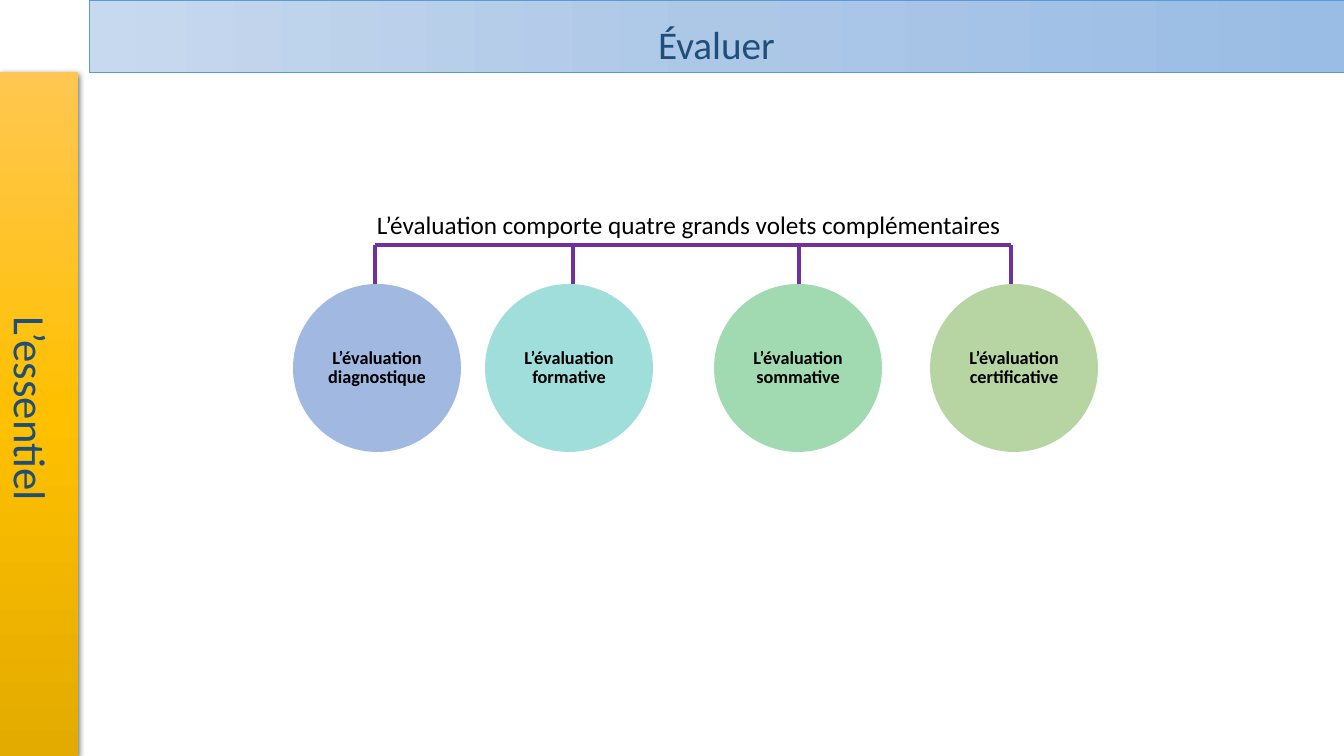
from copy import deepcopy

from lxml import etree
from pptx import Presentation
from pptx.dml.color import RGBColor
from pptx.enum.shapes import MSO_CONNECTOR as Connector, MSO_SHAPE as Shape
from pptx.enum.text import MSO_ANCHOR as Anchor, MSO_AUTO_SIZE as AutoSize, PP_ALIGN as Align
from pptx.oxml import parse_xml
from pptx.oxml.ns import nsdecls, qn
from pptx.util import Pt

PX = 12192000 / 1344  # EMU in one px
FONT = "Calibri"
COLORS = {
    "heading": "1F4E79",
    "text": "000000",
    "banner_line": "5B9BD5",
    "bracket": "7030A0",
}
BANNER_GRADIENT = ["C7D9EE", "ADC7E7", "9ABDE5"]
SIDEBAR_GRADIENT = ["FFC752", "FFC000", "E3AB00"]

CIRCLE_TOP, CIRCLE_SIZE, BRACKET_TOP = 284, 168, 245
# label, circle left, branch x, fill
EVALUATIONS = [
    ("L’évaluation diagnostique", 293, 375, "4472C4"),
    ("L’évaluation formative", 485, 573, "43BEB9"),
    ("L’évaluation sommative", 714, 799, "45B664"),
    ("L’évaluation certificative", 930, 1011, "70AD47"),
]


def px(*lengths):
    return [round(length * PX) for length in lengths]


def rgb(hex_color):
    return RGBColor.from_string(hex_color)


def set_text(shape, text, size, color, align=Align.CENTER, anchor=Anchor.BOTTOM, bold=False):
    frame = shape.text_frame
    frame.text = text
    frame.word_wrap = True
    frame.auto_size = AutoSize.NONE
    frame.vertical_anchor = anchor
    paragraph = frame.paragraphs[0]
    paragraph.alignment = align
    font = paragraph.runs[0].font
    font.name, font.size, font.bold = FONT, Pt(size), bold
    font.color.rgb = rgb(color)
    return frame


def fill_gradient(shape, colors, angle):
    shape.fill.gradient()
    shape.fill.gradient_angle = angle
    stop_list = shape._element.spPr.find(".//" + qn("a:gsLst"))
    stop_list.append(deepcopy(stop_list[0]))
    for index, (stop, color) in enumerate(zip(shape.fill.gradient_stops, colors)):
        stop.position = index / (len(colors) - 1)
        stop.color.rgb = rgb(color)


def format_banner(title):
    title.left, title.top, title.width, title.height = px(89, 0, 1255, 72)
    fill_gradient(title, BANNER_GRADIENT, 0)
    title.line.color.rgb = rgb(COLORS["banner_line"])
    title.line.width = Pt(0.5)
    set_text(title, "Évaluer", 28, COLORS["heading"])


def add_sidebar(slide):
    sidebar = slide.shapes.add_shape(Shape.RECTANGLE, *px(0, 72, 78, 684))
    fill_gradient(sidebar, SIDEBAR_GRADIENT, 270)
    sidebar.line.fill.background()
    sidebar._element.spPr.append(parse_xml(
        f'<a:effectLst {nsdecls("a")}>'
        '<a:outerShdw blurRad="57150" dist="19050" dir="5400000" algn="ctr" rotWithShape="0">'
        '<a:srgbClr val="000000"><a:alpha val="63000"/></a:srgbClr>'
        '</a:outerShdw></a:effectLst>'))
    frame = set_text(sidebar, "L’essentiel ", 32, COLORS["heading"])
    frame._txBody.bodyPr.set("vert", "vert")


def add_statement(slide):
    box = slide.shapes.add_textbox(*px(367, 204, 711, 41))
    set_text(box, "L’évaluation comporte quatre grands volets complémentaires", 18,
             COLORS["text"], align=Align.LEFT)


def add_circle(slide, label, left, color):
    circle = slide.shapes.add_shape(
        Shape.OVAL, *px(left, CIRCLE_TOP, CIRCLE_SIZE, CIRCLE_SIZE))
    circle.shadow.inherit = False
    circle.fill.solid()
    circle.fill.fore_color.rgb = rgb(color)
    fill_color = circle._element.spPr.find(qn("a:solidFill"))[0]
    etree.SubElement(fill_color, qn("a:alpha"), val="50000")
    circle.line.fill.background()
    frame = set_text(circle, label, 13, COLORS["text"], anchor=Anchor.MIDDLE, bold=True)
    frame.margin_left, frame.margin_right, frame.margin_top, frame.margin_bottom = px(9, 9, 2, 2)
    frame.paragraphs[0].line_spacing = 0.9


def add_line(slide, x1, y1, x2, y2):
    line = slide.shapes.add_connector(Connector.STRAIGHT, *px(x1, y1, x2, y2))
    line.line.color.rgb = rgb(COLORS["bracket"])
    line.line.width = Pt(2.25)
    etree.SubElement(line._element.spPr, qn("a:effectLst"))


def main():
    presentation = Presentation()
    presentation.slide_width, presentation.slide_height = px(1344, 756)
    slide = presentation.slides.add_slide(presentation.slide_layouts[5])

    # Banner and sidebar
    format_banner(slide.shapes.title)
    add_sidebar(slide)

    # Statement and its four parts
    add_statement(slide)
    for label, left, _, color in EVALUATIONS:
        add_circle(slide, label, left, color)

    # Bracket joining the parts
    branches = [branch for _, _, branch, _ in EVALUATIONS]
    add_line(slide, branches[0], BRACKET_TOP, branches[-1], BRACKET_TOP)
    for branch in branches:
        add_line(slide, branch, BRACKET_TOP, branch, CIRCLE_TOP)

    presentation.save("out.pptx")


if __name__ == "__main__":
    main()
